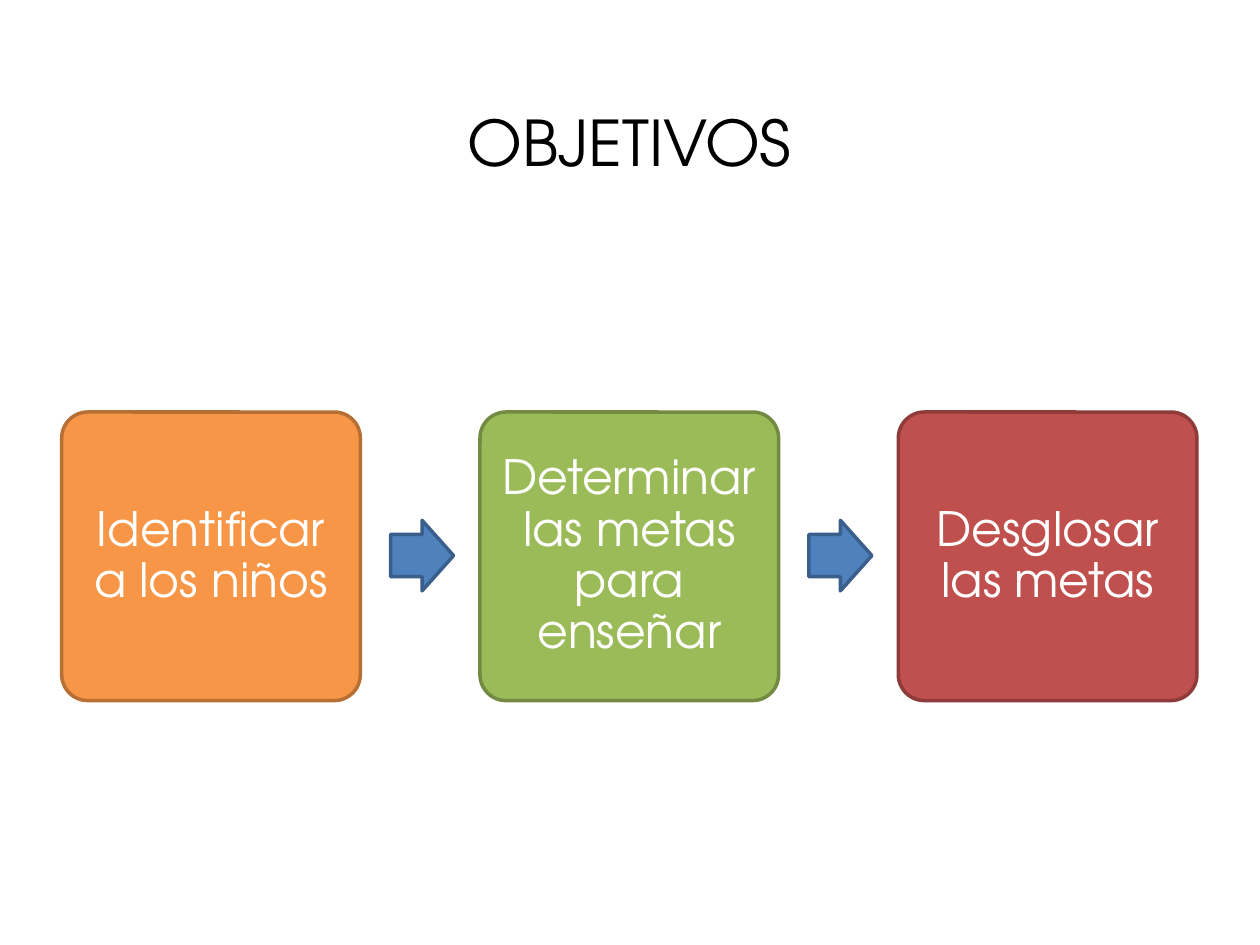
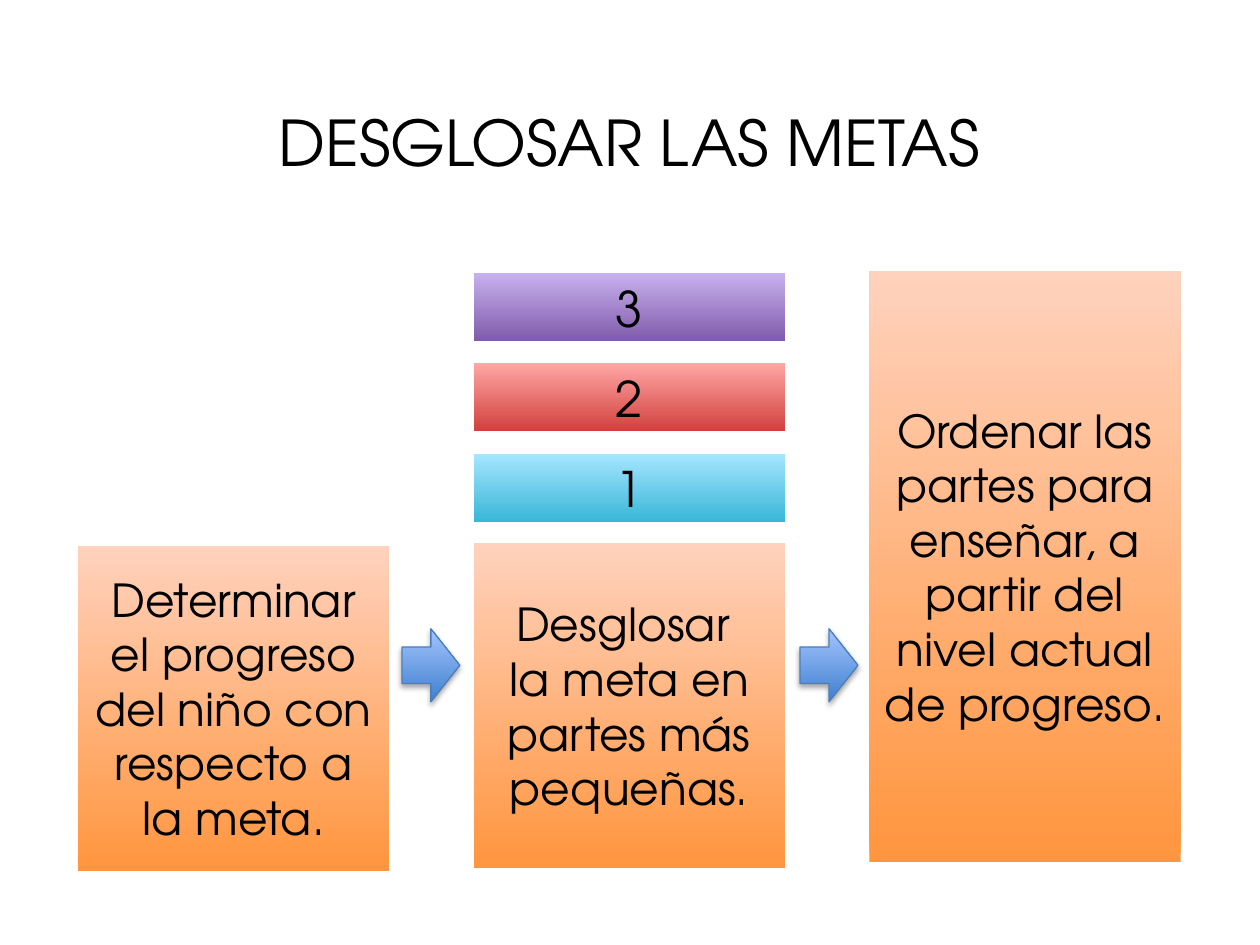
"""Build two slides on setting goals for children and breaking them into parts."""
import dataclasses

import lxml.etree
import pptx
import pptx.dml.color
import pptx.enum.shapes
import pptx.enum.text
import pptx.oxml.ns
import pptx.util


@dataclasses.dataclass(frozen=True)
class Theme:
    font: str = "TeX Gyre Adventor"
    black: str = "000000"
    white: str = "FFFFFF"
    step_arrow: tuple = ("4F81BD", "3A5F8C")
    orange_fade: tuple = ("FF953E", "FFD2BD")
    arrow_fade: tuple = ("3F80CE", "A4C4FF")
    arrow_line: str = "4B7EBC"
    title_size: int = 36
    step_size: int = 27
    body_size: int = 26
    number_size: int = 28


def write(shape, text, size, color):
    """Put centred text of one size and colour in a shape."""
    frame = shape.text_frame
    frame.word_wrap = True
    frame.vertical_anchor = pptx.enum.text.MSO_ANCHOR.MIDDLE
    paragraph = frame.paragraphs[0]
    paragraph.text = text
    paragraph.alignment = pptx.enum.text.PP_ALIGN.CENTER
    for run in paragraph.runs:
        run.font.color.rgb = pptx.dml.color.RGBColor.from_string(color)
        for name, value in {"name": theme.font, "size": pptx.util.Pt(size)}.items():
            setattr(run.font, name, value)
    return paragraph


def draw(slide, kind, box, colors, line=None, line_width=2):
    """Add a preset shape with a plain fill or a fade from bottom to top."""
    shape = slide.shapes.add_shape(kind, *map(pptx.util.Inches, box))
    shape.shadow.inherit = False
    if len(colors) == 1:
        shape.fill.solid()
        shape.fill.fore_color.rgb = pptx.dml.color.RGBColor.from_string(colors[0])
    else:
        shape.fill.gradient()
        shape.fill.gradient_angle = 90
        for stop, color, position in zip(shape.fill.gradient_stops, colors, (0, 1)):
            stop.color.rgb = pptx.dml.color.RGBColor.from_string(color)
            stop.position = position
    if line:
        shape.line.color.rgb = pptx.dml.color.RGBColor.from_string(line)
        shape.line.width = pptx.util.Pt(line_width)
    else:
        shape.line.fill.background()
    return shape


theme = Theme()
shapes = pptx.enum.shapes.MSO_SHAPE
presentation = pptx.Presentation()
presentation.slide_width = pptx.util.Inches(10)
presentation.slide_height = pptx.util.Inches(7.5)

slides = []
for heading in ("OBJETIVOS", "DESGLOSAR LAS METAS"):
    slide = presentation.slides.add_slide(presentation.slide_layouts[5])
    title = slide.shapes.title
    title_box = {"left": 0.36, "top": 0.5, "width": 9.27, "height": 1.25}
    for name, value in title_box.items():
        setattr(title, name, pptx.util.Inches(value))
    write(title, heading, theme.title_size, theme.black)
    slides.append(slide)
goals_slide, breakdown_slide = slides

steps = (
    ("Identificar a los niños", "F79646", "B76F34"),
    ("Determinar las metas para enseñar", "9BBB59", "738A42"),
    ("Desglosar las metas", "C0504D", "8E3B39"),
)
step_left, step_pitch = 0.49, 3.32
for column, (text, fill, line) in enumerate(steps):
    left = step_left + column * step_pitch
    step = draw(goals_slide, shapes.ROUNDED_RECTANGLE, (left, 3.27, 2.37, 2.29), (fill,), line)
    step.adjustments[0] = 0.09
    paragraph = write(step, text, theme.step_size, theme.white)
    paragraph.line_spacing = 0.9
    for side in ("left", "top", "right", "bottom"):
        setattr(step.text_frame, f"margin_{side}", pptx.util.Inches(0.1))
    if column < len(steps) - 1:
        fill, line = theme.step_arrow
        arrow = draw(goals_slide, shapes.RIGHT_ARROW, (left + 2.61, 4.13, 0.5, 0.56), (fill,), line)
        arrow.adjustments[0] = 0.6

part_left, part_pitch, part_width = 0.62, 3.14, 2.47
parts = (
    ("Determinar el progreso del niño con respecto a la meta.", 4.33, 2.58),
    ("Desglosar \nla meta en partes más pequeñas.", 4.31, 2.58),
    ("Ordenar las partes para enseñar, a partir del nivel actual de progreso.", 2.15, 4.69),
)
for column, (text, top, height) in enumerate(parts):
    box = (part_left + column * part_pitch, top, part_width, height)
    part = draw(breakdown_slide, shapes.RECTANGLE, box, theme.orange_fade)
    write(part, text, theme.body_size, theme.black)

number_fades = (("39B7D8", "A7E6FF"), ("D1403C", "FFA6A5"), ("7F5BAB", "C8B0ED"))
for row, fade in enumerate(number_fades):
    box = (part_left + part_pitch, 3.6 - row * 0.715, part_width, 0.54)
    band = draw(breakdown_slide, shapes.RECTANGLE, box, fade)
    write(band, str(row + 1), theme.number_size, theme.black)

for column in range(len(parts) - 1):
    box = (3.19 + column * 3.16, 4.99, 0.46, 0.58)
    arrow = draw(breakdown_slide, shapes.RIGHT_ARROW, box, theme.arrow_fade, theme.arrow_line, 0.75)
    qn = pptx.oxml.ns.qn
    effects = arrow._element.spPr.find(qn("a:effectLst"))
    shadow = lxml.etree.SubElement(
        effects, qn("a:outerShdw"), blurRad=str(pptx.util.Pt(3.1)),
        dist=str(pptx.util.Pt(1.8)), dir="5400000", rotWithShape="0")
    shade = lxml.etree.SubElement(shadow, qn("a:srgbClr"), val=theme.black)
    lxml.etree.SubElement(shade, qn("a:alpha"), val="35000")

presentation.save("out.pptx")
